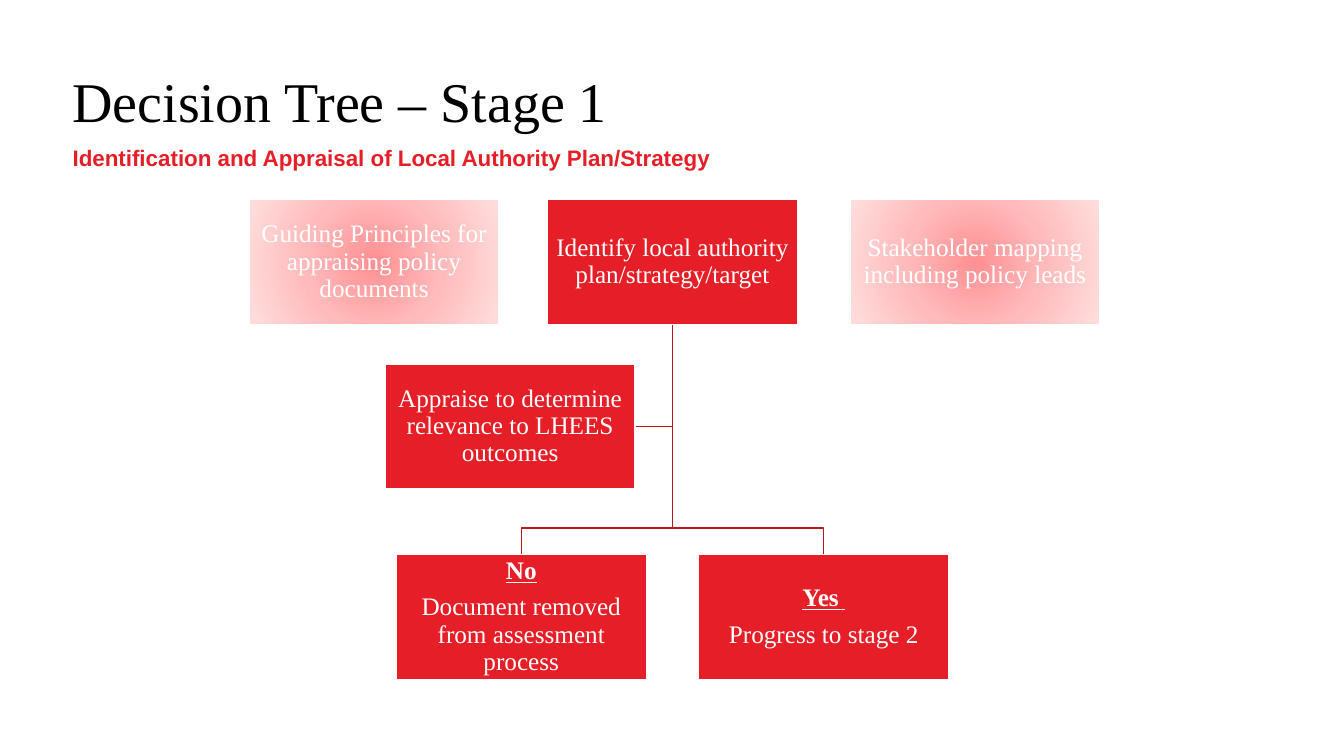
from dataclasses import dataclass

from pptx import Presentation
from pptx.dml.color import RGBColor as Rgb
from pptx.enum.shapes import MSO_SHAPE as Shape
from pptx.enum.text import MSO_ANCHOR as Anchor, MSO_AUTO_SIZE as Fit, PP_ALIGN as Align
from pptx.oxml import parse_xml
from pptx.oxml.ns import nsdecls
from pptx.util import Inches, Pt

HUES = {"red": "E61E28", "dark": "B81820", "white": "FFFFFF", "black": "000000"}
GLOW = {0: "FF9092", 50: "FFBBBC", 100: "FFDEDE"}
SERIF = "Times New Roman"
WIDE, HIGH = 2.48, 1.24
TOP, MID, LOW = 1.98, 3.61, 5.5
STEM, FORK = 6.67, 5.24
SIDES = ("left", "top", "right", "bottom")


@dataclass
class Box:
    left: float
    top: float
    text: str
    head: str = ""
    glow: bool = False


@dataclass
class Link:
    points: list[tuple[float, float]]


BOXES = [
    Box(2.47, TOP, "Guiding Principles for appraising policy documents", glow=True),
    Box(5.43, TOP, "Identify local authority plan/strategy/target"),
    Box(8.43, TOP, "Stakeholder mapping including policy leads", glow=True),
    Box(3.82, MID, "Appraise to determine relevance to LHEES outcomes"),
    Box(3.93, LOW, "Document removed from assessment process", head="No"),
    Box(6.93, LOW, "Progress to stage 2", head="Yes "),
]

START = (STEM, TOP + HIGH)
LINKS = [Link([START, (STEM, 4.23), (6.3, 4.23)])] + [
    Link([START, (STEM, FORK), (end, FORK), (end, LOW)]) for end in (8.17, 5.17)
]


def tint(name: str) -> Rgb:
    return Rgb.from_string(HUES[name])


def put(item, values: dict) -> None:
    """Set each named attribute of the item."""
    for name, value in values.items():
        setattr(item, name, value)


def style(para, form: dict, hue: str, **font) -> None:
    put(para, form)
    put(para.font, font)
    para.font.color.rgb = tint(hue)


def frame(shape, inset: float, anchor: Anchor):
    text = shape.text_frame
    put(text, {f"margin_{side}": Inches(inset) for side in SIDES})
    put(text, {"word_wrap": True, "auto_size": Fit.NONE, "vertical_anchor": anchor})
    return text


def radiate(shape) -> None:
    """Fill the shape with the pale gradient spreading from its centre."""
    stops = "".join(
        f'<a:gs pos="{pos * 1000}"><a:srgbClr val="{hue}"/></a:gs>'
        for pos, hue in GLOW.items()
    )
    grad = parse_xml(
        f'<a:gradFill {nsdecls("a")} rotWithShape="1"><a:gsLst>{stops}</a:gsLst>'
        '<a:path path="circle"><a:fillToRect l="50000" t="50000" r="50000" b="50000"/>'
        "</a:path></a:gradFill>"
    )
    shape.fill.background()
    props = shape.fill._xPr
    props.replace(props.noFill, grad)


def outline(shape, hue: str) -> None:
    shape.shadow.inherit = False
    shape.line.color.rgb = tint(hue)
    shape.line.width = Pt(1)


def draw_link(slide, link: Link) -> None:
    first, *rest = [(Inches(x), Inches(y)) for x, y in link.points]
    pen = slide.shapes.build_freeform(*first)
    pen.add_line_segments(rest, close=False)
    line = pen.convert_to_shape()
    line.fill.background()
    outline(line, "dark")


def draw_box(slide, box: Box) -> None:
    shape = slide.shapes.add_shape(
        Shape.RECTANGLE, *map(Inches, (box.left, box.top, WIDE, HIGH))
    )
    outline(shape, "white")
    if box.glow:
        radiate(shape)
    else:
        shape.fill.solid()
        shape.fill.fore_color.rgb = tint("red")
    text = frame(shape, 0.01, Anchor.MIDDLE)
    form = {"alignment": Align.CENTER, "line_spacing": 0.9}
    font = {"name": SERIF, "size": Pt(18)}
    para = text.paragraphs[0]
    if box.head:
        para.text = box.head
        style(para, form | {"space_after": Pt(6.5)}, "white",
              bold=True, underline=True, **font)
        para = text.add_paragraph()
    para.text = box.text
    style(para, form, "white", **font)


def draw_head(shape, area: tuple, words: str, form: dict, hue: str, **font) -> None:
    """Move a placeholder to its area and give it words and format."""
    put(shape, dict(zip(("left", "top", "width", "height"), map(Inches, area))))
    text = frame(shape, 0, Anchor.TOP)
    text.text = words
    style(text.paragraphs[0],
          {"alignment": Align.LEFT, "space_before": Pt(0)} | form, hue, **font)


def main() -> None:
    deck = Presentation()
    put(deck, {"slide_width": Inches(13.33), "slide_height": Inches(7.5)})
    slide = deck.slides.add_slide(deck.slide_layouts[0])
    draw_head(slide.shapes.title, (0.72, 0.72, 9.87, 0.58), "Decision Tree – Stage 1",
              {"line_spacing": Pt(44)}, "black", name=SERIF, size=Pt(40))
    draw_head(slide.placeholders[1], (0.72, 1.43, 6.88, 0.27),
              "Identification and Appraisal of Local Authority Plan/Strategy",
              {"space_after": Pt(9)}, "red", name="Arial", size=Pt(16), bold=True)
    for link in LINKS:
        draw_link(slide, link)
    for box in BOXES:
        draw_box(slide, box)
    deck.save("out.pptx")


if __name__ == "__main__":
    main()
